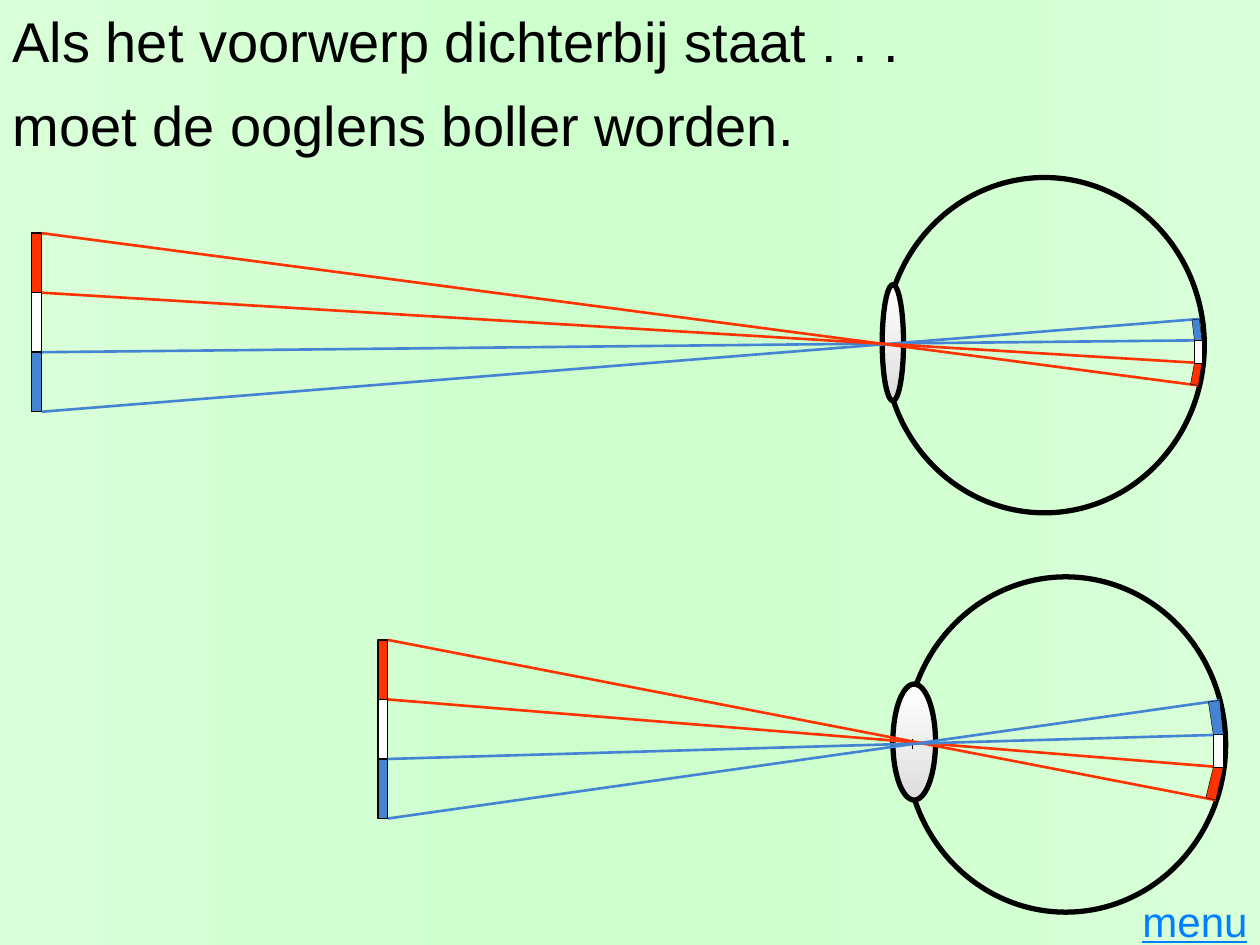
from copy import deepcopy

from lxml.etree import SubElement
from pptx import Presentation
from pptx.dml.color import RGBColor
from pptx.enum.shapes import MSO_CONNECTOR, MSO_SHAPE
from pptx.enum.text import MSO_ANCHOR, MSO_AUTO_SIZE, PP_ALIGN
from pptx.oxml.ns import qn
from pptx.util import Cm, Pt

RED, WHITE, BLUE, BLACK = "FF3300", "FFFFFF", "4584D3", "000000"
BANDS = (RED, WHITE, BLUE)
RAYS = (RED, RED, BLUE, BLUE)
EYE_W, EYE_H = 6.45, 6.76
BAR_W, BAR_H = 0.2, 3.6


def rgb(value):
    """Return the colour for a hex string."""
    return RGBColor.from_string(value)


def gradient(fill, element, angle, colours):
    """Give a fill evenly spaced gradient stops."""
    fill.gradient()
    fill.gradient_angle = angle
    stops = element.find(".//" + qn("a:gsLst"))
    for _ in colours[2:]:
        stops.insert(1, deepcopy(stops[0]))
    for i, (stop, colour) in enumerate(zip(fill.gradient_stops, colours)):
        stop.color.rgb = rgb(colour)
        stop.position = i / (len(colours) - 1)


def outline(sp, colour, width):
    """Set the line of a shape and drop its shadow."""
    sp.line.color.rgb = rgb(colour)
    sp.line.width = Pt(width)
    if hasattr(sp, "shadow"):
        sp.shadow.inherit = False


def add_line(s, start, end, colour, width):
    """Add a straight line between two points in centimetres."""
    points = [Cm(v) for v in (*start, *end)]
    sp = s.shapes.add_connector(MSO_CONNECTOR.STRAIGHT, *points)
    outline(sp, colour, width)
    SubElement(sp.element.spPr, qn("a:effectLst"))


def add_text(sp, box, text, size, colour, align=PP_ALIGN.LEFT, underline=False):
    """Place a text shape in its box and write one formatted line."""
    for name, value in zip(("left", "top", "width", "height"), box):
        setattr(sp, name, Cm(value))
    tf = sp.text_frame
    frame = {"word_wrap": True, "auto_size": MSO_AUTO_SIZE.NONE,
             "vertical_anchor": MSO_ANCHOR.TOP}
    for name, value in frame.items():
        setattr(tf, name, value)
    p = tf.paragraphs[0]
    p.alignment = align
    p.space_before = Pt(0)
    pPr = p._p.get_or_add_pPr()
    pPr.set("marL", "0")
    pPr.set("indent", "0")
    SubElement(pPr, qn("a:buNone"))
    r = p.add_run()
    r.text = text
    font = {"name": "Arial", "size": Pt(size), "underline": underline}
    for name, value in font.items():
        setattr(r.font, name, value)
    r.font.color.rgb = rgb(colour)


def add_eye(s, left, top, lens_w):
    """Draw the lens and the open eyeball."""
    lens_h = 2.34
    lens = s.shapes.add_shape(
        MSO_SHAPE.OVAL, Cm(left + 0.17 - lens_w / 2),
        Cm(top + 3.33 - lens_h / 2), Cm(lens_w), Cm(lens_h))
    gradient(lens.fill, lens.element, 270, (WHITE, "DDDDDD"))
    outline(lens, BLACK, 3)
    ball = s.shapes.add_shape(MSO_SHAPE.ARC, Cm(left), Cm(top),
                              Cm(EYE_W), Cm(EYE_H))
    for i, degrees in enumerate((201, 160)):
        ball.adjustments[i] = degrees * 0.6
    ball.fill.background()
    outline(ball, BLACK, 3)


def add_cross(s, x, y, size):
    """Mark the centre of a lens."""
    half = size / 2
    add_line(s, (x, y - half), (x, y + half), BLACK, 0.75)
    add_line(s, (x - half, y), (x + half, y), BLACK, 0.75)


def add_bar(s, left, top):
    """Draw the three-coloured object."""
    step = BAR_H / len(BANDS)
    for i, colour in enumerate(BANDS):
        sp = s.shapes.add_shape(MSO_SHAPE.RECTANGLE, Cm(left),
                                Cm(top + i * step), Cm(BAR_W), Cm(step))
        sp.fill.solid()
        sp.fill.fore_color.rgb = rgb(colour)
        outline(sp, BLACK, 0.75)


def add_rays(s, bar, ends, order):
    """Draw the chosen rays from the object to the retina."""
    left, top = bar
    for i in order:
        start = (left + BAR_W, top + i * BAR_H / len(BANDS))
        add_line(s, start, ends[i], RAYS[i], 1.5)


def add_retina(s, inner, outer):
    """Draw the inverted image between the inner and outer edge points."""
    for i, colour in enumerate(BANDS):
        corners = [(Cm(x), Cm(y)) for x, y in
                   (inner[i], inner[i + 1], outer[i + 1], outer[i])]
        builder = s.shapes.build_freeform(*corners[0])
        builder.add_line_segments(corners[1:], close=True)
        sp = builder.convert_to_shape()
        sp.fill.solid()
        sp.fill.fore_color.rgb = rgb(colour)
        outline(sp, BLACK, 0.25)


def add_scene(s, bar, eye, lens_w, inner, outer, behind=(), cross=False):
    """Draw an object, an eye and the rays that join them."""
    left, top = eye
    inner, outer = ([(left + x, top + y) for x, y in edge]
                    for edge in (inner, outer))
    add_rays(s, bar, outer, behind)
    add_eye(s, left, top, lens_w)
    if cross:
        add_cross(s, left + 0.13, top + 3.36, 0.2)
    add_bar(s, *bar)
    add_rays(s, bar, outer, [i for i in (0, 3, 1, 2) if i not in behind])
    add_retina(s, inner, outer)


def main():
    """Build the slide and save it."""
    prs = Presentation()
    prs.slide_width, prs.slide_height = Cm(25.4), Cm(19.05)
    s = prs.slides.add_slide(prs.slide_layouts[1])
    gradient(s.background.fill, s.element, 0, ("D8FFD8", "CCFFCC", "D8FFD8"))
    add_text(s.shapes.title, (0, 0, 25.4, 1.63),
             "Als het voorwerp dichterbij staat . . .", 32, BLACK)
    add_text(s.placeholders[1], (0, 1.7, 25.4, 1.63),
             "moet de ooglens boller worden.", 32, BLACK)
    add_scene(s, (0.64, 4.7), (17.83, 3.58), 0.43,
              ((6.17, 4.17), (6.25, 3.74), (6.25, 3.28), (6.2, 2.87)),
              ((6.33, 4.19), (6.4, 3.74), (6.4, 3.28), (6.35, 2.85)),
              behind=(2,))
    add_scene(s, (7.62, 12.9), (18.26, 11.63), 0.86,
              ((6.05, 4.45), (6.2, 3.84), (6.2, 3.18), (6.1, 2.52)),
              ((6.25, 4.5), (6.4, 3.84), (6.4, 3.18), (6.33, 2.49)),
              cross=True)
    menu = s.shapes.add_textbox(0, 0, 0, 0)
    add_text(menu, (22.5, 17.93, 2.9, 1.27), "menu", 24, "0080FF",
             PP_ALIGN.RIGHT, True)
    prs.save("out.pptx")


if __name__ == "__main__":
    main()
